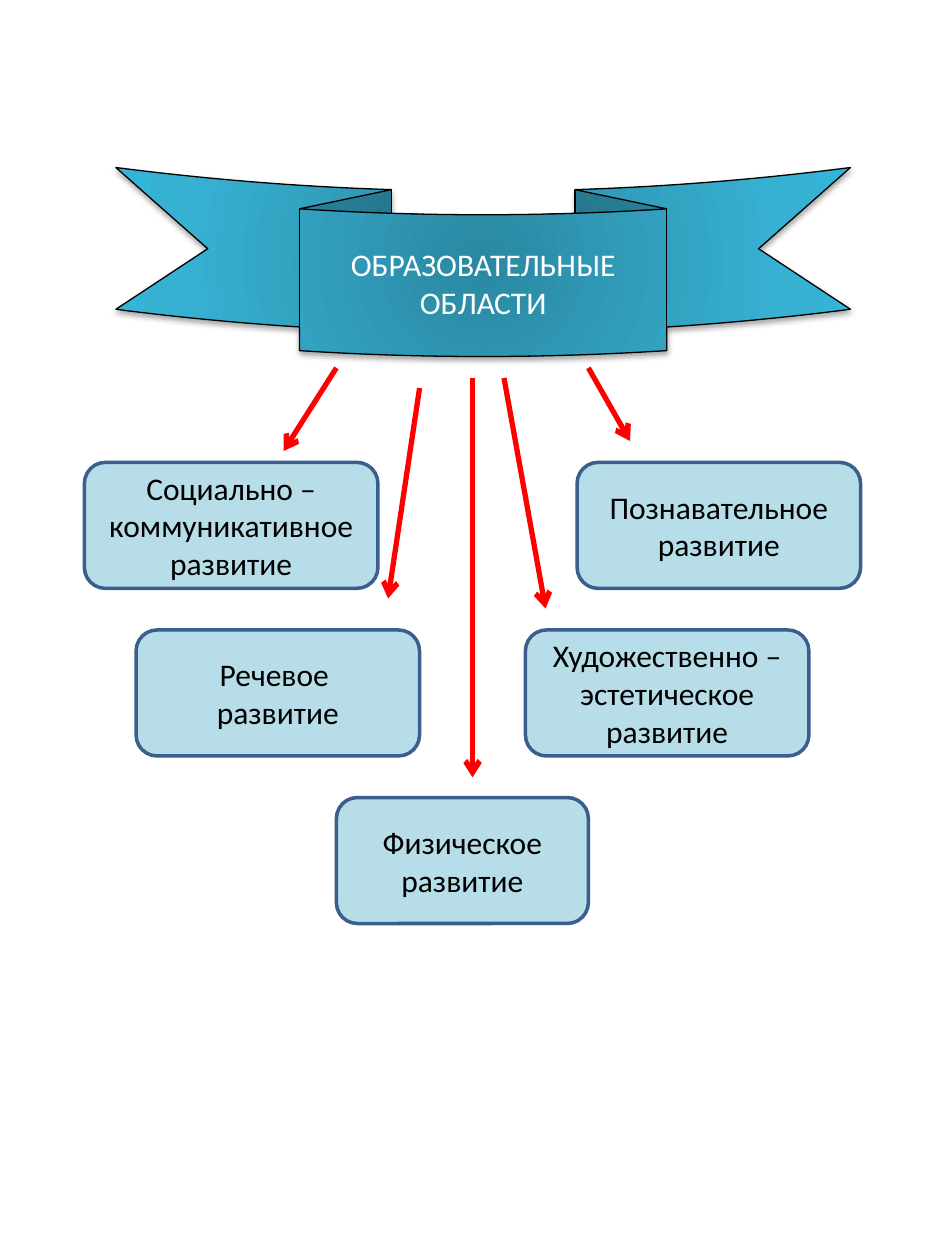
from lxml import etree
from pptx import Presentation
from pptx.dml.color import RGBColor
from pptx.enum.shapes import MSO_CONNECTOR, MSO_SHAPE
from pptx.enum.text import MSO_ANCHOR, PP_ALIGN
from pptx.oxml import parse_xml
from pptx.oxml.ns import nsdecls, qn
from pptx.util import Inches, Pt

RIBBON = MSO_SHAPE.CURVED_DOWN_RIBBON
ROUNDED = MSO_SHAPE.ROUNDED_RECTANGLE
STRAIGHT = MSO_CONNECTOR.STRAIGHT
CENTER = PP_ALIGN.CENTER
MIDDLE = MSO_ANCHOR.MIDDLE

WHITE = RGBColor(0xFF, 0xFF, 0xFF)
BLACK = RGBColor(0x00, 0x00, 0x00)
RED = RGBColor(0xFF, 0x00, 0x00)
PALE_BLUE = RGBColor(0xB7, 0xDE, 0xE8)
DARK_BLUE = RGBColor(0x3A, 0x5F, 0x8C)
RIBBON_STOPS = [
    (0, RGBColor(0x2A, 0x88, 0xA2)),
    (80, RGBColor(0x37, 0xB1, 0xD2)),
    (100, RGBColor(0x34, 0xB4, 0xD6)),
]

UPPER_ROW, MIDDLE_ROW, LOWER_ROW = 3.67, 5, 6.33
AREA_HEIGHT = 1
AREAS = [
    (["Социально – коммуникативное развитие"], 0.67, UPPER_ROW, 2.33),
    (["Речевое ", "развитие"], 1.08, MIDDLE_ROW, 2.25),
    (["Физическое развитие"], 2.67, LOWER_ROW, 2),
    (["Художественно – эстетическое развитие"], 4.17, MIDDLE_ROW, 2.25),
    (["Познавательное развитие"], 4.58, UPPER_ROW, 2.25),
]
ARROWS = [
    (3.75, 3, 3.75, 6.17),
    (2.67, 2.92, 2.25, 3.58),
    (3.33, 3.08, 3.08, 4.75),
    (4, 3, 4.33, 4.83),
    (4.67, 2.92, 5, 3.5),
]


def write_text(shape, lines, *, color, size=18, font="Calibri"):
    """Write centred lines into a shape, one paragraph each."""
    frame = shape.text_frame
    frame.word_wrap = True
    frame.vertical_anchor = MIDDLE
    for index, line in enumerate(lines):
        para = frame.add_paragraph() if index else frame.paragraphs[0]
        para.alignment = CENTER
        span = para.add_run()
        span.text = line
        span.font.name = font
        span.font.size = Pt(size)
        span.font.color.rgb = color


def add_outlined_shape(page, kind, box, line_color, line_width):
    """Add a preset shape with a plain outline and no inherited shadow."""
    shape = page.shapes.add_shape(kind, *(Inches(length) for length in box))
    shape.line.color.rgb = line_color
    shape.line.width = Pt(line_width)
    shape.shadow.inherit = False
    return shape


def add_ribbon(page, box, lines):
    """Add the title ribbon with its radial gradient and soft shadow."""
    ribbon = add_outlined_shape(page, RIBBON, box, BLACK, 0.75)
    stops = "".join(
        f'<a:gs pos="{percent * 1000}"><a:srgbClr val="{color}"/></a:gs>'
        for percent, color in RIBBON_STOPS
    )
    gradient = parse_xml(
        f'<a:gradFill {nsdecls("a")} rotWithShape="1"><a:gsLst>{stops}</a:gsLst>'
        '<a:path path="circle">'
        '<a:fillToRect l="50000" t="50000" r="50000" b="50000"/>'
        "</a:path></a:gradFill>"
    )
    shadow = parse_xml(
        f'<a:outerShdw {nsdecls("a")} blurRad="{Pt(3.1)}" dist="{Pt(1.8)}" '
        'dir="5400000" rotWithShape="0"><a:srgbClr val="000000">'
        '<a:alpha val="35000"/></a:srgbClr></a:outerShdw>'
    )
    properties = ribbon._element.spPr
    properties.find(qn("a:ln")).addprevious(gradient)
    properties.find(qn("a:effectLst")).append(shadow)
    write_text(ribbon, lines, color=WHITE)


def add_area(page, box, lines):
    """Add one rounded box naming an educational area."""
    area = add_outlined_shape(page, ROUNDED, box, DARK_BLUE, 2)
    area.fill.solid()
    area.fill.fore_color.rgb = PALE_BLUE
    write_text(area, lines, color=BLACK)


def add_arrow(page, ends):
    """Add a red arrow from the ribbon towards an area."""
    arrow = page.shapes.add_connector(STRAIGHT, *(Inches(end) for end in ends))
    arrow.line.color.rgb = RED
    arrow.line.width = Pt(3)
    properties = arrow._element.spPr
    etree.SubElement(properties.find(qn("a:ln")), qn("a:tailEnd"), type="arrow")
    etree.SubElement(properties, qn("a:effectLst"))


def main():
    """Build the slide of educational areas."""
    deck = Presentation()
    deck.slide_width = Inches(7.5)
    deck.slide_height = Inches(10)
    page = deck.slides.add_slide(deck.slide_layouts[6])
    add_ribbon(page, (0.92, 1.33, 5.83, 1.5), ["ОБРАЗОВАТЕЛЬНЫЕ", "ОБЛАСТИ"])
    for lines, left, top, width in AREAS:
        add_area(page, (left, top, width, AREA_HEIGHT), lines)
    for ends in ARROWS:
        add_arrow(page, ends)
    deck.save("out.pptx")


if __name__ == "__main__":
    main()
